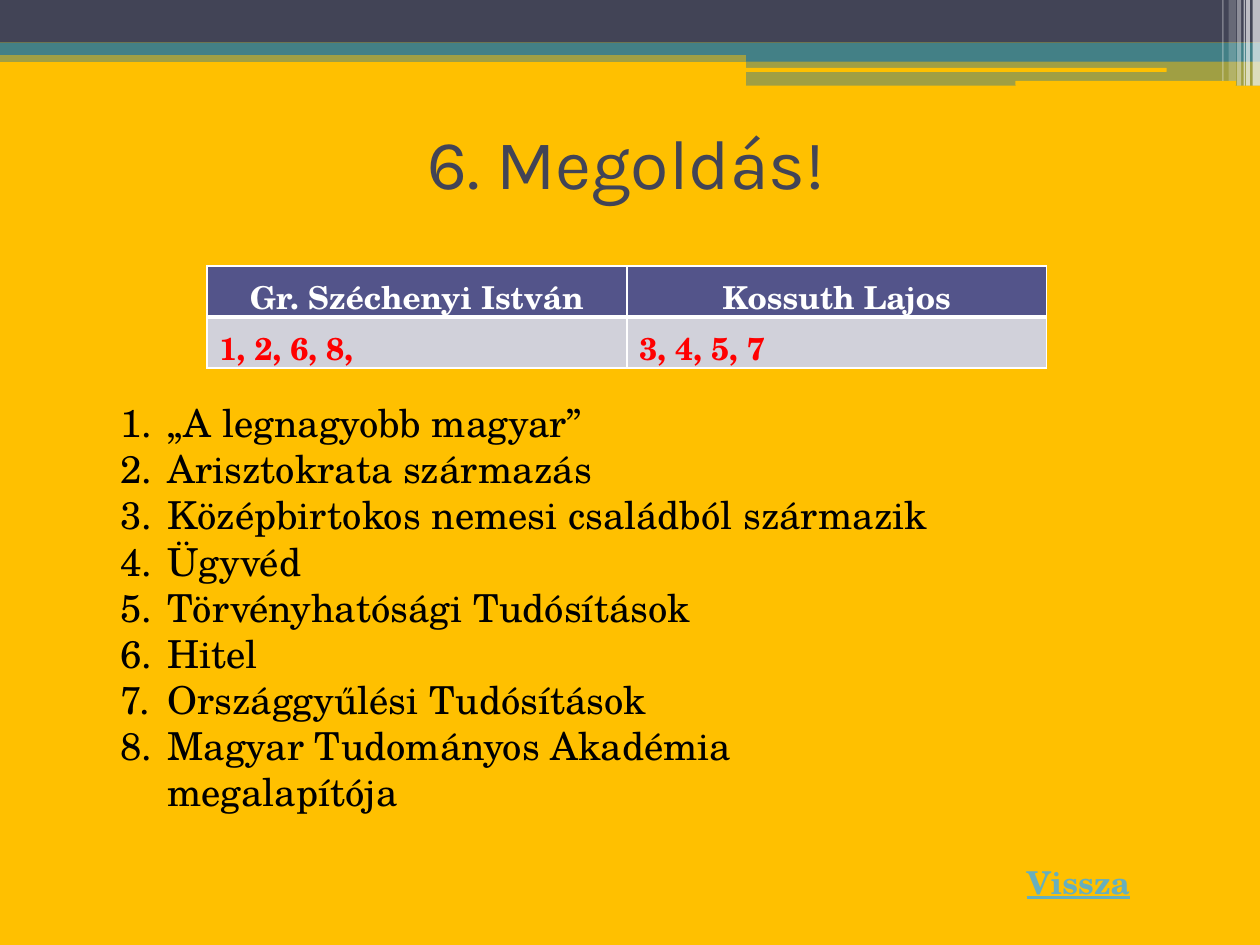
from lxml import etree
from pptx import Presentation
from pptx.dml.color import RGBColor
from pptx.enum.shapes import MSO_SHAPE
from pptx.enum.text import MSO_ANCHOR, PP_ALIGN
from pptx.oxml.ns import qn
from pptx.util import Cm, Pt

RECTANGLE = MSO_SHAPE.RECTANGLE
ROUNDED = MSO_SHAPE.ROUNDED_RECTANGLE
LEFT, CENTER = PP_ALIGN.LEFT, PP_ALIGN.CENTER
TOP, MIDDLE = MSO_ANCHOR.TOP, MSO_ANCHOR.MIDDLE
HEADING_FONT, BODY_FONT = "Karla", "TeX Gyre Schola"

COLORS = {
    "background": "FFC000",
    "dark": "424456",
    "teal": "438086",
    "white": "FFFFFF",
    "header": "53548A",
    "row": "D1D1DA",
    "answer": "FF0000",
    "text": "000000",
    "link": "67AFBD",
}

BANDS = [
    (RECTANGLE, 0, 1.02, 25.4, 0.23, "teal", 50),
    (RECTANGLE, 0, 0, 25.4, 0.86, "dark", 100),
    (RECTANGLE, 0, 0.86, 25.4, 0.25, "teal", 100),
    (RECTANGLE, 15.04, 0.99, 10.36, 0.25, "teal", 100),
    (RECTANGLE, 15.04, 1.22, 10.36, 0.51, "teal", 50),
    (ROUNDED, 15.01, 1.37, 8.51, 0.08, "background", 100),
    (ROUNDED, 20.47, 1.63, 4.45, 0.1, "background", 100),
]
STRIPES = [
    (25.25, 0.15, 1.73, 65),
    (25.12, 0.08, 1.73, 65),
    (25.07, 0.03, 1.73, 60),
    (24.94, 0.08, 1.73, 40),
    (24.77, 0.15, 1.63, 20),
    (24.64, 0.03, 1.63, 30),
]
ANSWERS = [
    ["Gr. Széchenyi István", "Kossuth Lajos"],
    ["1, 2, 6, 8,", "3, 4, 5, 7"],
]
STATEMENTS = [
    "„A legnagyobb magyar”",
    "Arisztokrata származás",
    "Középbirtokos nemesi családból származik",
    "Ügyvéd",
    "Törvényhatósági Tudósítások",
    "Hitel",
    "Országgyűlési Tudósítások",
    "Magyar Tudományos Akadémia megalapítója",
]


def color(name):
    return RGBColor.from_string(COLORS[name])


def paint(fill, name, opacity=100):
    fill.solid()
    fill.fore_color.rgb = color(name)
    if opacity < 100:
        tint = fill._xPr.find(qn("a:solidFill"))[0]
        etree.SubElement(tint, qn("a:alpha"), val=str(opacity * 1000))


def add_band(page, kind, left, top, width, height, name, opacity):
    band = page.shapes.add_shape(kind, Cm(left), Cm(top), Cm(width), Cm(height))
    band.shadow.inherit = False
    band.line.fill.background()
    paint(band.fill, name, opacity)


def write(para, text, font=BODY_FONT, size=18, name="text", bold=False,
          underline=False, align=LEFT):
    para.alignment = align
    span = para.add_run()
    span.text = text
    span.font.name = font
    span.font.size = Pt(size)
    span.font.bold = bold
    span.font.underline = underline
    span.font.color.rgb = color(name)


def add_box(page, left, top, width, height, wrap=True, anchor=TOP):
    box = page.shapes.add_textbox(Cm(left), Cm(top), Cm(width), Cm(height))
    box.text_frame.word_wrap = wrap
    box.text_frame.vertical_anchor = anchor
    return box.text_frame


def add_numbered_list(page, items, left, top, width, height):
    frame = add_box(page, left, top, width, height)
    for index, item in enumerate(items):
        para = frame.paragraphs[0] if index == 0 else frame.add_paragraph()
        write(para, item, size=22)
        properties = para._p.get_or_add_pPr()
        indent = Cm(0.95)
        properties.set("marL", str(indent))
        properties.set("indent", str(-indent))
        etree.SubElement(properties, qn("a:buFont"), typeface="+mj-lt")
        etree.SubElement(properties, qn("a:buAutoNum"), type="arabicPeriod")


def add_border(cell, side, points):
    line = etree.SubElement(cell._tc.get_or_add_tcPr(), qn(f"a:ln{side}"), w=str(Pt(points)))
    fill = etree.SubElement(line, qn("a:solidFill"))
    etree.SubElement(fill, qn("a:srgbClr"), val=COLORS["white"])


def add_answer_table(page, rows, left, top, width, height):
    table = page.shapes.add_table(
        len(rows), len(rows[0]), Cm(left), Cm(top), Cm(width), Cm(height)).table
    for row, texts in enumerate(rows):
        header = row == 0
        for column, text in enumerate(texts):
            cell = table.cell(row, column)
            borders = {"L": 1, "R": 1, "T": 1 if header else 3, "B": 3 if header else 1}
            for side, points in borders.items():
                add_border(cell, side, points)
            paint(cell.fill, "header" if header else "row")
            write(cell.text_frame.paragraphs[0], text, bold=True,
                  name="white" if header else "answer",
                  align=CENTER if header else LEFT)


def main():
    deck = Presentation()
    deck.slide_width, deck.slide_height = Cm(25.4), Cm(19.05)
    page = deck.slides.add_slide(deck.slide_layouts[6])
    paint(page.background.fill, "background")

    for band in BANDS:
        add_band(page, *band)
    for left, width, height, opacity in STRIPES:
        add_band(page, RECTANGLE, left, 0, width, height, "white", opacity)

    title = add_box(page, 1.19, 1.78, 22.86, 2.97, anchor=MIDDLE)
    write(title.paragraphs[0], "6. Megoldás!", font=HEADING_FONT, size=40,
          name="dark", align=CENTER)
    back = add_box(page, 20.45, 17.27, 2.62, 1.02, wrap=False)
    write(back.paragraphs[0], "Vissza", name="link", bold=True, underline=True)
    add_answer_table(page, ANSWERS, 4.17, 5.36, 16.93, 2.06)
    add_numbered_list(page, STATEMENTS, 2.18, 7.92, 17.27, 7.77)

    deck.save("out.pptx")


if __name__ == "__main__":
    main()
